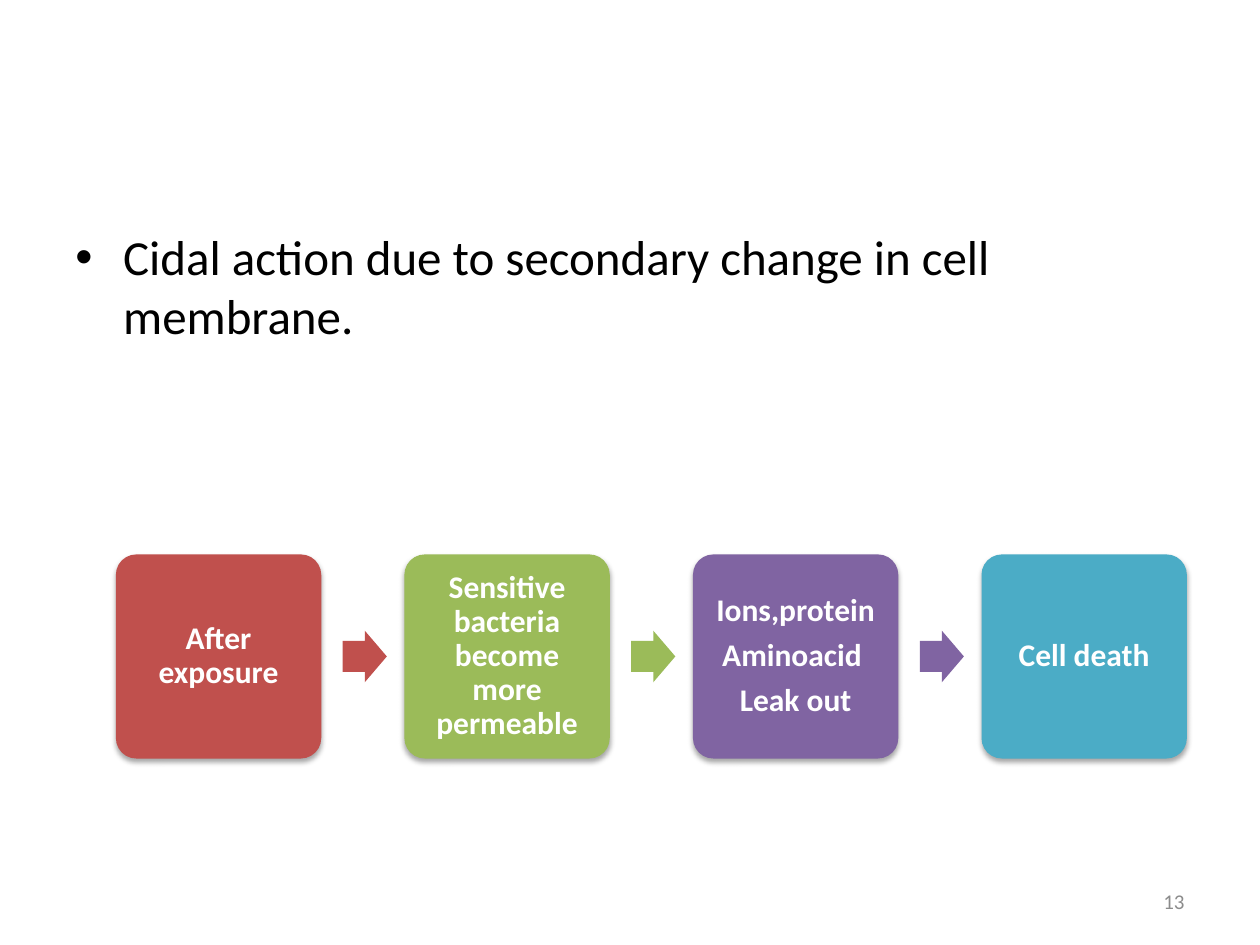
from lxml.etree import SubElement
from pptx import Presentation
from pptx.dml.color import RGBColor
from pptx.enum.shapes import MSO_SHAPE as Shape
from pptx.enum.text import MSO_ANCHOR as Anchor, PP_ALIGN as Align
from pptx.oxml.ns import qn
from pptx.util import Inches, Pt

COLORS = {
    "red": "C0504D", "green": "9BBB59", "purple": "8064A2", "teal": "4BACC6",
    "white": "FFFFFF", "black": "000000", "gray": "8C8C8C",
}
FONT = "Calibri"
STATEMENT = "Cidal action due to secondary change in cell membrane."
PAGE_NUMBER = "13"
STEPS = [
    ("red", ["After exposure"]),
    ("green", ["Sensitive bacteria become more permeable"]),
    ("purple", ["Ions,protein", "Aminoacid ", "Leak out"]),
    ("teal", ["Cell death"]),
]

WIDTH, HEIGHT = 10, 7.5
MARGIN = WIDTH * 0.05
FLOW_LEFT, FLOW_MIDDLE = 0.92, 5.21
STEP_PITCH, STEP_WIDTH, STEP_HEIGHT = 2.29, 1.63, 1.62
ARROW_OFFSET, ARROW_WIDTH, ARROW_HEIGHT = 1.8, 0.35, 0.41


def rgb(name):
    return RGBColor.from_string(COLORS[name])


def write(frame, lines, size, color, align, bold=False):
    frame.word_wrap = True
    frame.text = "\n".join(lines)
    for para in frame.paragraphs:
        para.alignment = align
        for span in para.runs:
            span.font.name = FONT
            span.font.size = Pt(size)
            span.font.bold = bold
            span.font.color.rgb = rgb(color)


def add_text(page, bounds, text, size, color, align, anchor):
    box = page.shapes.add_textbox(*map(Inches, bounds))
    write(box.text_frame, [text], size, color, align)
    box.text_frame.vertical_anchor = anchor
    return box.text_frame.paragraphs[0]


def add_bullet(para, indent):
    para.space_before = Pt(5.6)
    props = para._p.get_or_add_pPr()
    props.set("marL", str(Inches(indent)))
    props.set("indent", str(-Inches(indent)))
    SubElement(props, qn("a:buFont"), typeface="Arial")
    SubElement(props, qn("a:buChar"), char="•")


def add_solid(page, kind, left, width, height, color, adjustments):
    top = FLOW_MIDDLE - height / 2
    shape = page.shapes.add_shape(kind, *map(Inches, (left, top, width, height)))
    shape.shadow.inherit = False
    shape.fill.solid()
    shape.fill.fore_color.rgb = rgb(color)
    shape.line.fill.background()
    for index, value in enumerate(adjustments):
        shape.adjustments[index] = value
    return shape


def add_shadow(shape):
    effects = shape._element.spPr.find(qn("a:effectLst"))
    shadow = SubElement(effects, qn("a:outerShdw"), blurRad=str(Pt(3.1)),
                        dist=str(Pt(1.8)), dir="5400000", rotWithShape="0")
    tint = SubElement(shadow, qn("a:srgbClr"), val=COLORS["black"])
    SubElement(tint, qn("a:alpha"), val="35000")


def add_step(page, left, color, lines):
    box = add_solid(page, Shape.ROUNDED_RECTANGLE, left, STEP_WIDTH, STEP_HEIGHT, color, [0.1])
    add_shadow(box)
    frame = box.text_frame
    write(frame, lines, 18, "white", Align.CENTER, bold=True)
    frame.vertical_anchor = Anchor.MIDDLE
    frame.margin_left = frame.margin_right = Inches(0.07)
    frame.margin_top = frame.margin_bottom = Inches(0.07)
    for para in frame.paragraphs:
        para.line_spacing = 0.9
        para.space_after = Pt(6.3)


def main():
    deck = Presentation()
    deck.slide_width, deck.slide_height = Inches(WIDTH), Inches(HEIGHT)
    page = deck.slides.add_slide(deck.slide_layouts[6])

    statement = add_text(page, (MARGIN, 1.75, WIDTH - 2 * MARGIN, 4.95), STATEMENT,
                         28, "black", Align.LEFT, Anchor.TOP)
    add_bullet(statement, 0.38)

    for index, (color, lines) in enumerate(STEPS):
        left = FLOW_LEFT + index * STEP_PITCH
        add_step(page, left, color, lines)
        if index < len(STEPS) - 1:
            add_solid(page, Shape.RIGHT_ARROW, left + ARROW_OFFSET,
                      ARROW_WIDTH, ARROW_HEIGHT, color, [0.6, 0.5])

    add_text(page, (7.17, 6.95, 2.33, 0.4), PAGE_NUMBER,
             12, "gray", Align.RIGHT, Anchor.MIDDLE)
    deck.save("out.pptx")


if __name__ == "__main__":
    main()
